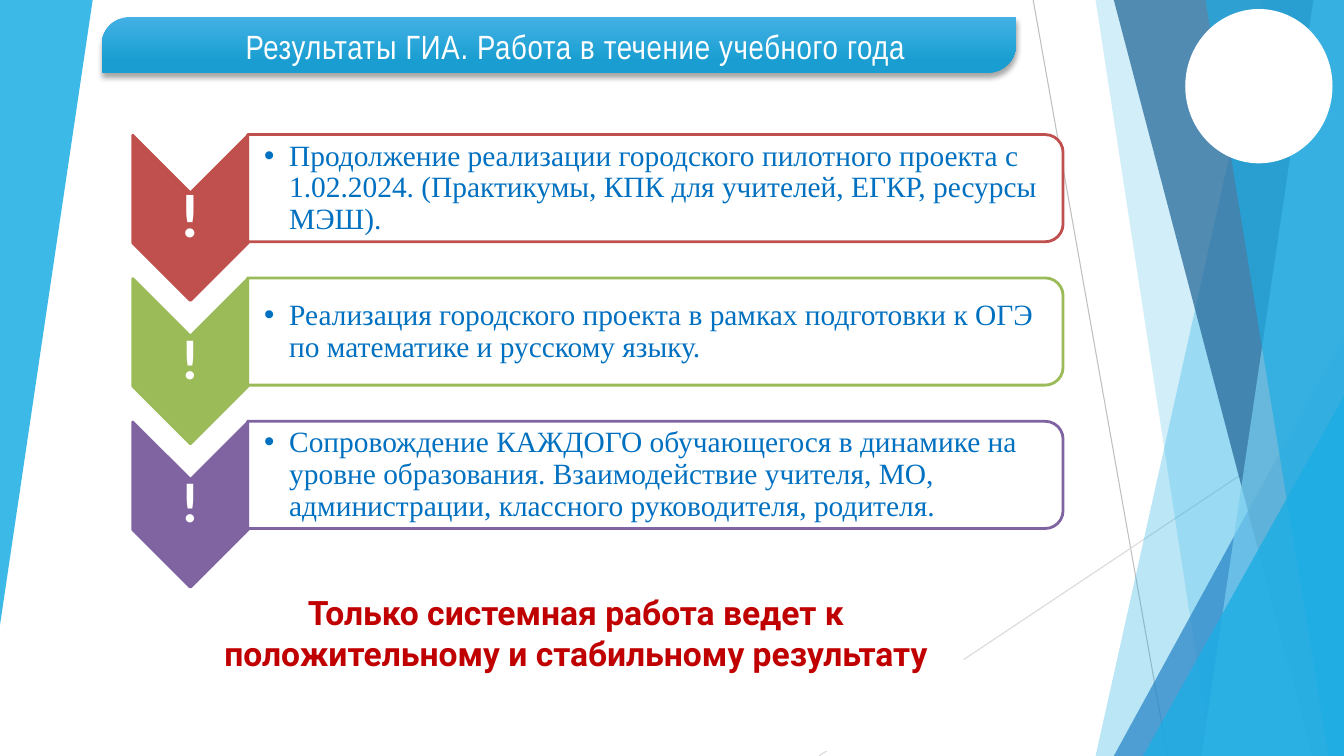
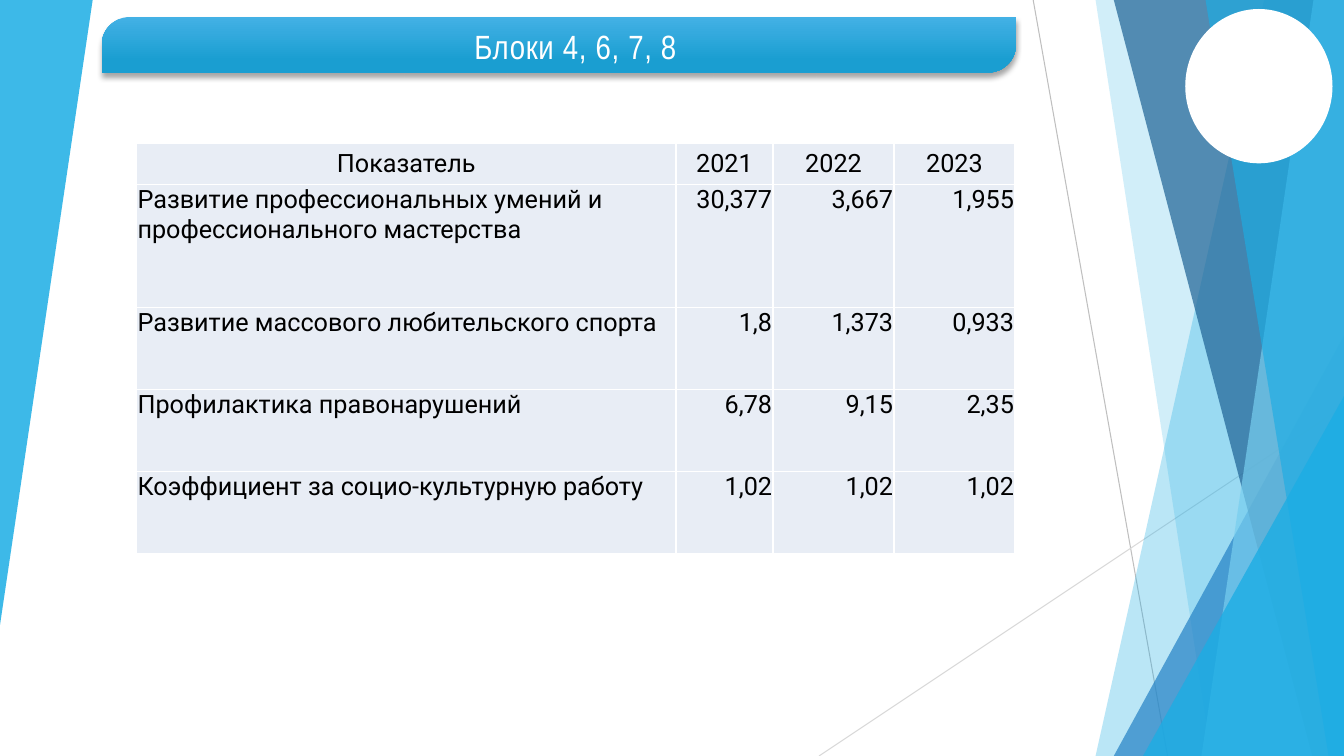
import pptx
import pptx.dml.color
import pptx.enum.shapes
import pptx.enum.text
import pptx.oxml.ns
import pptx.util
from lxml import etree

Pt = pptx.util.Pt
RGBColor = pptx.dml.color.RGBColor
MSO_SHAPE = pptx.enum.shapes.MSO_SHAPE
MSO_ANCHOR = pptx.enum.text.MSO_ANCHOR
PP_ALIGN = pptx.enum.text.PP_ALIGN
qn = pptx.oxml.ns.qn

WHITE = RGBColor(0xFF, 0xFF, 0xFF)
BLACK = RGBColor(0x00, 0x00, 0x00)
SKY = RGBColor(0x1C, 0xAD, 0xE4)
PALE_SKY = RGBColor(0x77, 0xCE, 0xEF)
BLUE = RGBColor(0x26, 0x83, 0xC6)
NAVY = RGBColor(0x1D, 0x62, 0x94)
BAND_TOP = RGBColor(0x43, 0xB1, 0xE5)
BAND_BOTTOM = RGBColor(0x1A, 0x9E, 0xD1)
LINE_GRAY = RGBColor(0xBF, 0xBF, 0xBF)
LIGHT_GRAY = RGBColor(0xD9, 0xD9, 0xD9)
TEXT_BLUE = RGBColor(0x00, 0x70, 0xC0)
DARK_RED = RGBColor(0xC0, 0x00, 0x00)
RED = RGBColor(0xC0, 0x50, 0x4D)
GREEN = RGBColor(0x9B, 0xBB, 0x59)
PURPLE = RGBColor(0x80, 0x64, 0xA2)
CELL_FILL = RGBColor(0xE8, 0xED, 0xF5)

WIDTH, HEIGHT = 960, 540


def paint(shape, color, opacity=100, line=None, line_width=2):
    """Give a shape a flat fill, an optional outline and no shadow."""
    shape.shadow.inherit = False
    shape.fill.solid()
    shape.fill.fore_color.rgb = color
    if opacity < 100:
        rgb = shape.element.spPr.find(qn("a:solidFill"))[0]
        etree.SubElement(rgb, qn("a:alpha"), val=str(opacity * 1000))
    if line is None:
        shape.line.fill.background()
    else:
        shape.line.color.rgb = line
        shape.line.width = Pt(line_width)


def write(frame, text, font, size, color, bold=False, align=PP_ALIGN.CENTER,
          anchor=MSO_ANCHOR.TOP, margins=None):
    """Fill a text frame with one run; margins are left, then the other sides."""
    frame.word_wrap = True
    frame.vertical_anchor = anchor
    if margins:
        frame.margin_left = Pt(margins[0])
        frame.margin_top = frame.margin_right = frame.margin_bottom = Pt(margins[1])
    paragraph = frame.paragraphs[0]
    paragraph.alignment = align
    run = paragraph.add_run()
    run.text = text
    run.font.name = font
    run.font.size = Pt(size)
    run.font.bold = bold
    run.font.color.rgb = color
    return paragraph


presentation = pptx.Presentation()
presentation.slide_width = Pt(WIDTH)
presentation.slide_height = Pt(HEIGHT)
blank_layout = presentation.slide_layouts[6]

# Thin lines: start, end, colour
background_lines = [
    ((738, 0), (834, HEIGHT), LINE_GRAY),
    ((WIDTH, 290), (585, HEIGHT), LIGHT_GRAY),
]
# Panels reach the right edge: (top left x, bottom left x).
# Triangles: (left, top, width, height, rotation).
background_panels = [
    (SKY, 30, (903, 782.6)),
    (SKY, 20, (782.6, 865.4)),
    (BLUE, 72, (795.6, 239.8, 164.4, 300.2, 0)),
    (NAVY, 70, (795.6, 937.4)),
    (PALE_SKY, 70, (938.2, 858.2)),
    (SKY, 65, (861.1, 949)),
    (SKY, 80, (816.5, 283, 143.5, 257, 0)),
    (SKY, 85, (0, 0, 66.2, 446.4, 180)),
]

# Shared background and title band
slides = []
for title in ("Результаты ГИА. Работа в течение учебного года", "Блоки 4, 6, 7, 8"):
    slide = presentation.slides.add_slide(blank_layout)
    slides.append(slide)

    for start, end, color in background_lines:
        connector = slide.shapes.add_connector(
            pptx.enum.shapes.MSO_CONNECTOR.STRAIGHT, *map(Pt, start + end))
        connector.line.color.rgb = color
        connector.line.width = Pt(0.75)
        etree.SubElement(connector.element.spPr, qn("a:effectLst"))

    for color, opacity, geometry in background_panels:
        if len(geometry) == 2:
            top_x, bottom_x = geometry
            builder = slide.shapes.build_freeform(Pt(top_x), 0)
            builder.add_line_segments(
                [(Pt(WIDTH), 0), (Pt(WIDTH), Pt(HEIGHT)), (Pt(bottom_x), Pt(HEIGHT))])
            panel = builder.convert_to_shape()
        else:
            panel = slide.shapes.add_shape(
                MSO_SHAPE.ISOSCELES_TRIANGLE, *map(Pt, geometry[:4]))
            panel.adjustments[0] = 1
            panel.rotation = geometry[4]
        paint(panel, color, opacity)

    circle = slide.shapes.add_shape(
        MSO_SHAPE.OVAL, Pt(847.4), Pt(7.2), Pt(103.7), Pt(108.7))
    paint(circle, WHITE, line=WHITE, line_width=1.5)

    band = slide.shapes.add_shape(
        MSO_SHAPE.ROUND_2_DIAG_RECTANGLE, Pt(72.7), Pt(12.2), Pt(653), Pt(39.6))
    band.adjustments[0] = 0.5
    band.adjustments[1] = 0
    band.line.fill.background()
    band.fill.gradient()
    band.fill.gradient_angle = 270
    for stop, color, position in zip(
            band.fill.gradient_stops, (BAND_TOP, BAND_BOTTOM), (0, 0.78)):
        stop.color.rgb = color
        stop.position = position
    band.shadow.inherit = False
    shadow = etree.SubElement(
        band.element.spPr.find(qn("a:effectLst")), qn("a:outerShdw"),
        blurRad=str(Pt(4)), dist=str(Pt(3)), dir="5400000", rotWithShape="0")
    shadow_color = etree.SubElement(shadow, qn("a:srgbClr"), val=str(BLACK))
    etree.SubElement(shadow_color, qn("a:alpha"), val="35000")

    title_box = slide.shapes.add_textbox(Pt(108), Pt(15.1), Pt(606.2), Pt(36))
    paragraph = write(title_box.text_frame, title, "Arial Narrow", 24, WHITE)
    paragraph.runs[0].font._element.set("spc", "50")

# Slide 1: three chevron rows and a conclusion
slide = slides[0]
conclusion = slide.shapes.add_shape(
    MSO_SHAPE.RECTANGLE, Pt(134.6), Pt(367.2), Pt(553.7), Pt(169.2))
paint(conclusion, WHITE)
write(conclusion.text_frame,
      "Только системная работа ведет к положительному и стабильному результату",
      "Roboto", 24, DARK_RED, bold=True, anchor=MSO_ANCHOR.MIDDLE)

measures = [
    (RED, 44, "Продолжение реализации городского пилотного проекта с 1.02.2024. "
              "(Практикумы, КПК для учителей, ЕГКР, ресурсы МЭШ)."),
    (GREEN, 40, "Реализация городского проекта в рамках подготовки к ОГЭ "
                "по математике и русскому языку."),
    (PURPLE, 40, "Сопровождение КАЖДОГО обучающегося в динамике на уровне образования. "
                 "Взаимодействие учителя, МО, администрации, классного руководителя, "
                 "родителя."),
]
ROW_STEP = 102.4
for index, (color, mark_size, text) in enumerate(measures):
    offset = index * ROW_STEP

    chevron = slide.shapes.add_shape(
        MSO_SHAPE.CHEVRON, Pt(77), Pt(114.4 + offset), Pt(118), Pt(82.4))
    chevron.rotation = 90
    paint(chevron, color, line=color)

    mark_box = slide.shapes.add_textbox(
        Pt(94.5), Pt(137.8 + offset), Pt(82.4), Pt(35.3))
    paragraph = write(mark_box.text_frame, "!", "Calibri", mark_size, WHITE, bold=True,
                      anchor=MSO_ANCHOR.MIDDLE, margins=(2, 2))
    paragraph.line_spacing = 0.9

    frame_shape = slide.shapes.add_shape(
        MSO_SHAPE.ROUND_2_SAME_RECTANGLE,
        Pt(429.8), Pt(-156.8 + offset), Pt(76.6), Pt(582.5))
    frame_shape.rotation = 90
    paint(frame_shape, WHITE, 90, line=color)

    text_box = slide.shapes.add_textbox(
        Pt(177.1), Pt(100.1 + offset), Pt(578.9), Pt(69.1))
    paragraph = write(text_box.text_frame, text, "Times New Roman", 21, TEXT_BLUE,
                      align=PP_ALIGN.LEFT, anchor=MSO_ANCHOR.MIDDLE, margins=(11.5, 0.9))
    paragraph.line_spacing = 0.9
    properties = paragraph._p.get_or_add_pPr()
    properties.set("marL", str(Pt(18)))
    properties.set("indent", str(Pt(-18)))
    etree.SubElement(properties, qn("a:buFont"), typeface="Arial")
    etree.SubElement(properties, qn("a:buChar"), char="•")

# Slide 2: table of indicators
indicators = [
    ("Показатель", "2021", "2022", "2023"),
    ("Развитие профессиональных умений и профессионального мастерства",
     "30,377", "3,667", "1,955"),
    ("Развитие массового любительского спорта", "1,8", "1,373", "0,933"),
    ("Профилактика правонарушений", "6,78", "9,15", "2,35"),
    ("Коэффициент за социо-культурную работу", "1,02", "1,02", "1,02"),
]
column_widths = (385.2, 69.4, 86.4, 86.4)
row_heights = (29.4, 87.9, 58.6, 58.6, 58.6)
table = slides[1].shapes.add_table(
    len(row_heights), len(column_widths), Pt(97.6), Pt(102.2),
    Pt(sum(column_widths)), Pt(sum(row_heights))).table
table.first_row = False
table.horz_banding = False
for column, width in zip(table.columns, column_widths):
    column.width = Pt(width)
for row, height in zip(table.rows, row_heights):
    row.height = Pt(height)

for row_index, values in enumerate(indicators):
    for column_index, value in enumerate(values):
        cell = table.cell(row_index, column_index)
        cell.margin_left = cell.margin_top = cell.margin_right = Pt(0.7)
        cell.margin_bottom = 0
        properties = cell._tc.get_or_add_tcPr()
        for side in ("a:lnL", "a:lnR", "a:lnT", "a:lnB"):
            border = etree.SubElement(properties, qn(side), w=str(Pt(1)))
            border_fill = etree.SubElement(border, qn("a:solidFill"))
            etree.SubElement(border_fill, qn("a:srgbClr"), val=str(WHITE))
        cell.fill.solid()
        cell.fill.fore_color.rgb = CELL_FILL
        if row_index == 0:
            align = PP_ALIGN.CENTER
        else:
            align = PP_ALIGN.RIGHT if column_index else PP_ALIGN.LEFT
        write(cell.text_frame, value, "Roboto", 18, BLACK, align=align)
        cell.vertical_anchor = MSO_ANCHOR.TOP if row_index else MSO_ANCHOR.MIDDLE

presentation.save("out.pptx")
